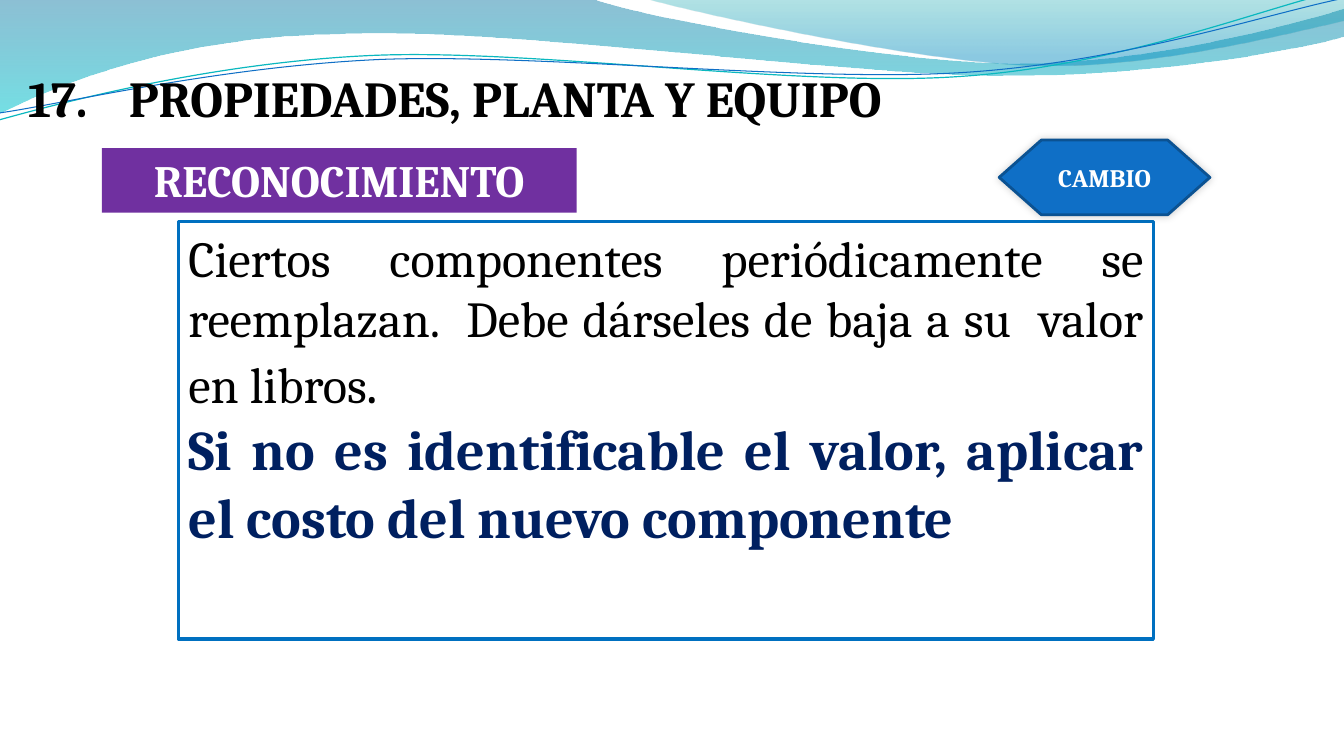
from lxml import etree
from pptx import Presentation
from pptx.dml.color import RGBColor
from pptx.enum import shapes, text
from pptx.oxml import parse_xml
from pptx.oxml.ns import nsdecls, qn
from pptx.util import Inches, Pt

BLACK = RGBColor(0x00, 0x00, 0x00)
WHITE = RGBColor(0xFF, 0xFF, 0xFF)
PURPLE = RGBColor(0x70, 0x30, 0xA0)
NAVY = RGBColor(0x00, 0x20, 0x60)
FRAME_BLUE = RGBColor(0x00, 0x70, 0xC0)
BLUE = RGBColor(0x0F, 0x6F, 0xC6)
DARK_BLUE = RGBColor(0x0B, 0x52, 0x92)
TEAL = RGBColor(0x0A, 0xB8, 0xBF)

UNITS_PER_INCH = 1000

presentation = Presentation()
presentation.slide_width = Inches(13.33)
presentation.slide_height = Inches(7.5)
slide = presentation.slides.add_slide(presentation.slide_layouts[6])


def add_wave(start, segments, closed):
    """Draw an outline from straight (2 numbers) and cubic (6 numbers) segments."""
    points = [start]
    for segment in segments:
        points += zip(segment[::2], segment[1::2])
    scaled = [(x * UNITS_PER_INCH, y * UNITS_PER_INCH) for x, y in points]
    builder = slide.shapes.build_freeform(*scaled[0], scale=Inches(1) / UNITS_PER_INCH)
    builder.add_line_segments(scaled[1:], close=closed)
    wave = builder.convert_to_shape()
    wave.shadow.inherit = False
    # Join each three lines of a cubic segment into one Bezier curve
    lines = iter(wave._element.xpath(".//a:lnTo"))
    for segment in segments:
        first = next(lines)
        if len(segment) == 6:
            first.addprevious(etree.Element(qn("a:cubicBezTo")))
            cubic = first.getprevious()
            for line in (first, next(lines), next(lines)):
                cubic.append(line[0])
                line.getparent().remove(line)
    return wave


def write_text(shape, paragraphs, align, anchor=text.MSO_ANCHOR.TOP):
    """Fill a shape with paragraphs, each a list of (words, size, colour, bold)."""
    frame = shape.text_frame
    frame.word_wrap = True
    frame.vertical_anchor = anchor
    for index, runs in enumerate(paragraphs):
        paragraph = frame.add_paragraph() if index else frame.paragraphs[0]
        paragraph.alignment = align
        for words, size, colour, bold in runs:
            run = paragraph.add_run()
            run.text = words
            run.font.color.rgb = colour
            for name, value in {"name": "Cambria", "size": Pt(size), "bold": bold}.items():
                setattr(run.font, name, value)


# Header bands: start, segments, gradient stops (position, colour, opacity)
bands = [
    ((0, 0),
     [(5.87, -0.01), (6.34, 0.17, 8.85, 0.63, 10.11, 0.63),
      (11.38, 0.63, 12.78, 0.26, 13.33, 0.09), (13.35, 0.36),
      (13.11, 0.44, 11.6, 0.76, 9.94, 0.75), (8.29, 0.75, 5.09, 0.28, 3.43, 0.34),
      (1.72, 0.36, 0.61, 0.83, -0.01, 1.13), (0, 0)],
     [(0, "0074A1", 45), (100, "00C6CF", 55)]),
    ((6.39, -0.01),
     [(6.79, 0.11, 9.09, 0.62, 10.25, 0.65), (11.41, 0.69, 12.82, 0.32, 13.33, 0.21),
      (13.33, 0), (6.39, -0.01)],
     [(0, "00A1A9", 30), (80, "008BBF", 45)]),
]
for start, segments, stops in bands:
    band = add_wave(start, segments, closed=True)
    band.line.fill.background()
    stop_xml = "".join(
        f'<a:gs pos="{position * 1000}"><a:srgbClr val="{colour}">'
        f'<a:alpha val="{opacity * 1000}"/></a:srgbClr></a:gs>'
        for position, colour, opacity in stops)
    gradient = parse_xml(f'<a:gradFill {nsdecls("a")} rotWithShape="1"><a:gsLst>{stop_xml}'
                         '</a:gsLst><a:lin ang="5400000" scaled="0"/></a:gradFill>')
    band._element.xpath("./p:spPr/a:ln")[0].addprevious(gradient)

# Thin header curves: start, segments, colour, width
curves = [
    ((-0.01, 1.19),
     [(0.64, 1.01, 2.11, 0.62, 3.69, 0.55), (5.27, 0.48, 7.9, 0.87, 9.5, 0.76),
      (11.1, 0.66, 12.52, 0.08, 13.31, -0.1)], TEAL, 0.85),
    ((0, 1.12),
     [(0.63, 1.03, 2.18, 0.66, 3.78, 0.59), (5.37, 0.53, 7.96, 0.82, 9.55, 0.72),
      (11.15, 0.62, 12.55, 0.14, 13.34, -0.02)], BLUE, 0.75),
]
for start, segments, colour, width in curves:
    curve = add_wave(start, segments, closed=False)
    curve.fill.background()
    curve.line.color.rgb = colour
    curve.line.width = Pt(width)

title = slide.shapes.add_textbox(Inches(0.18), Inches(0.62), Inches(10.5), Inches(0.71))
write_text(title, [[("17.\tPROPIEDADES, PLANTA Y EQUIPO", 36, BLACK, True)]],
           text.PP_ALIGN.LEFT)

heading = slide.shapes.add_shape(shapes.MSO_SHAPE.RECTANGLE, Inches(1.01), Inches(1.47),
                                 Inches(4.71), Inches(0.64))
heading.shadow.inherit = False
heading.fill.solid()
heading.fill.fore_color.rgb = PURPLE
heading.line.fill.background()
write_text(heading, [[("RECONOCIMIENTO", 32, WHITE, True)]], text.PP_ALIGN.CENTER)

body = slide.shapes.add_shape(shapes.MSO_SHAPE.RECTANGLE, Inches(1.77), Inches(2.2),
                              Inches(9.67), Inches(4.14))
body.shadow.inherit = False
body.fill.background()
body.line.color.rgb = FRAME_BLUE
body.line.width = Pt(2.25)
write_text(body, [
    [("Ciertos componentes periódicamente se reemplazan.  Debe dárseles de baja a su  "
      "valor en libros", 36, BLACK, False), (". ", 40, BLACK, False)],
    [("Si no es identificable el valor, aplicar el costo del nuevo componente\t",
      40, NAVY, True)],
], text.PP_ALIGN.JUSTIFY)

change = slide.shapes.add_shape(shapes.MSO_SHAPE.FLOWCHART_PREPARATION, Inches(9.91),
                                Inches(1.39), Inches(2.09), Inches(0.74))
change.shadow.inherit = False
change.fill.solid()
change.fill.fore_color.rgb = BLUE
change.line.color.rgb = DARK_BLUE
change.line.width = Pt(2)
write_text(change, [[("CAMBIO", 18, WHITE, True)]], text.PP_ALIGN.CENTER,
           text.MSO_ANCHOR.MIDDLE)
effects = change._element.xpath("./p:spPr/a:effectLst")[0]
effects.append(parse_xml(
    f'<a:outerShdw {nsdecls("a")} blurRad="{Pt(6)}" dist="0" dir="18900000" rotWithShape="0">'
    '<a:srgbClr val="000000"><a:alpha val="20000"/></a:srgbClr></a:outerShdw>'))

presentation.save("out.pptx")
